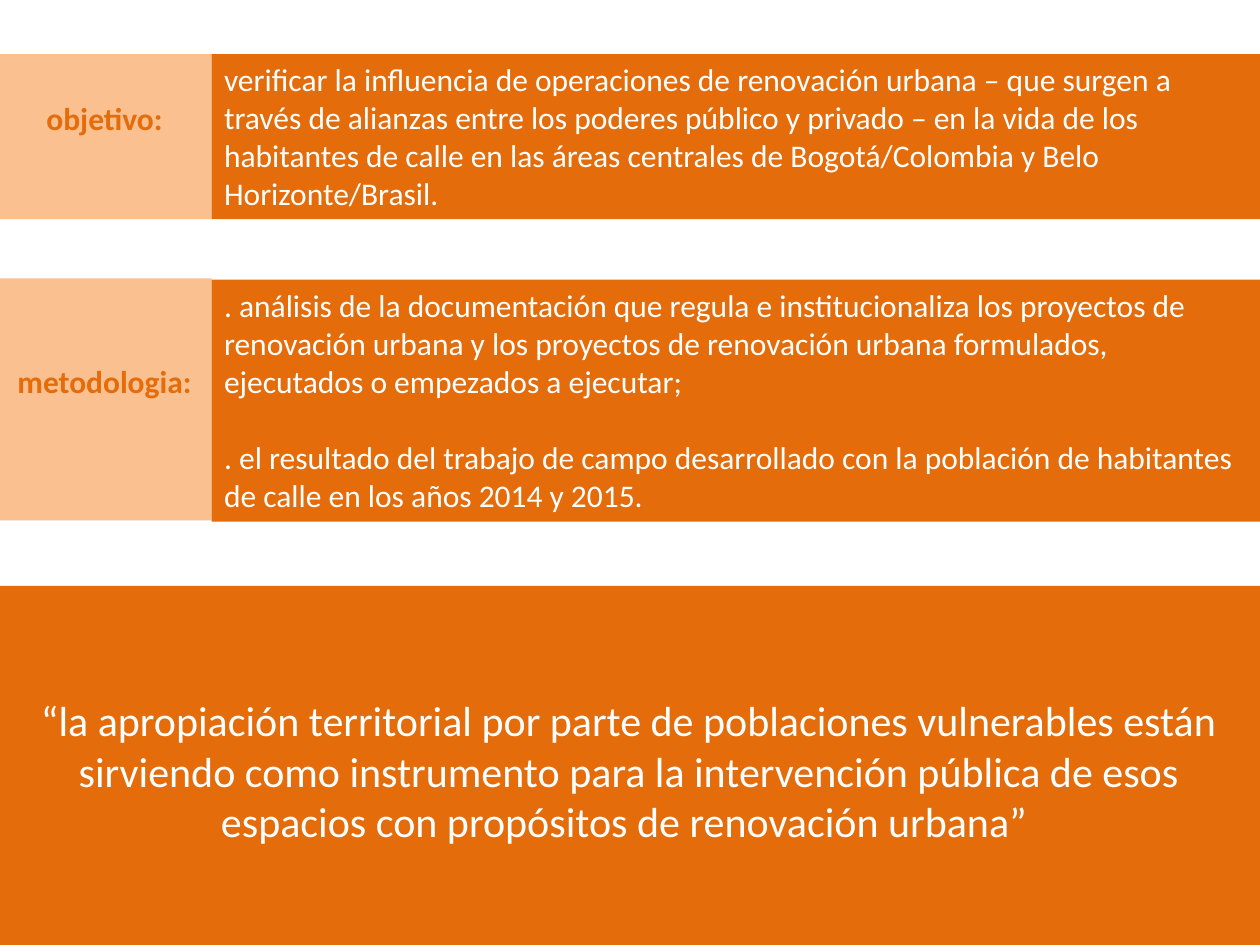
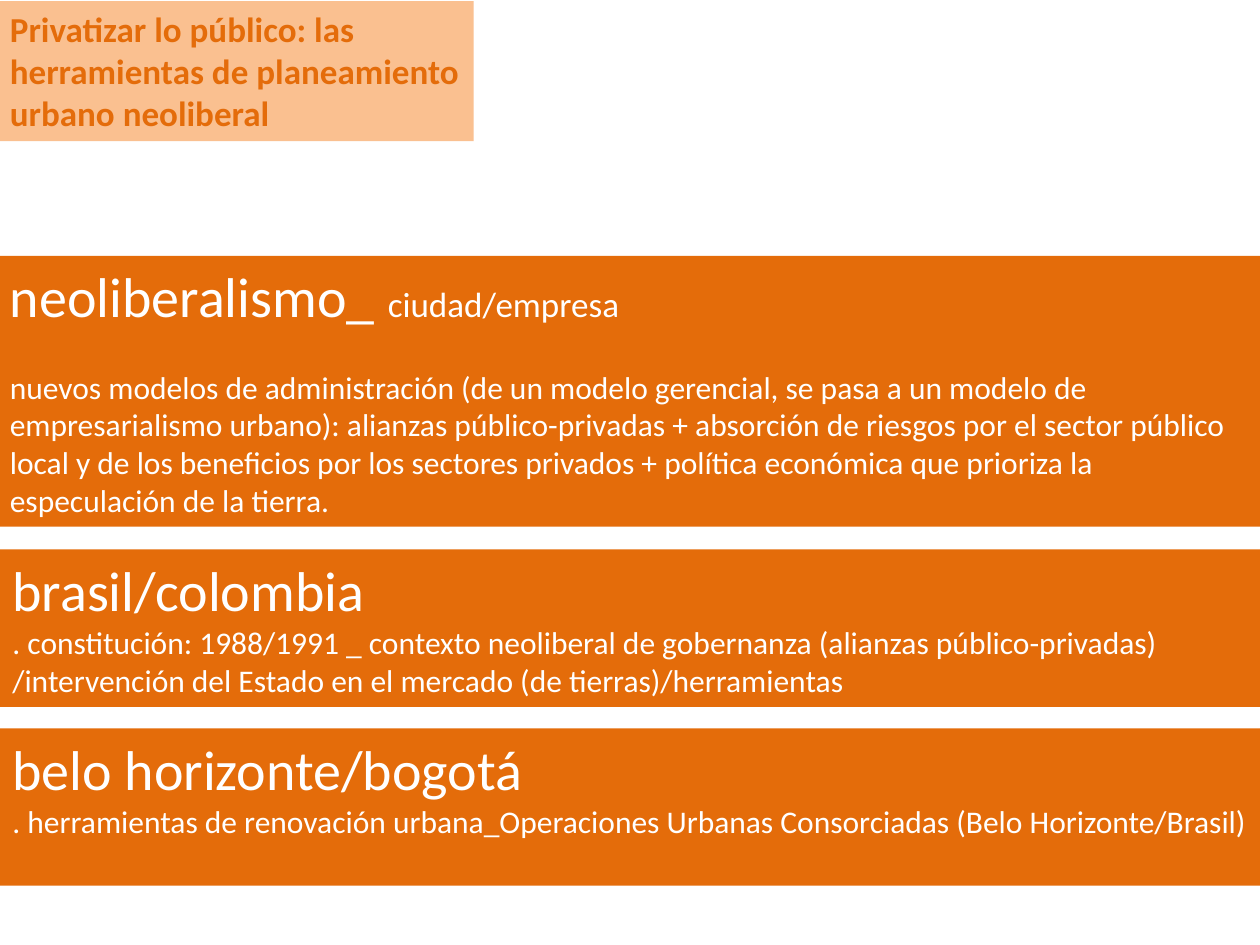
from pptx import Presentation
from pptx.dml.color import RGBColor
from pptx.enum import shapes, text
from pptx.util import Inches, Pt

ORANGE = RGBColor(0xE4, 0x6C, 0x0A)
PEACH = RGBColor(0xFA, 0xC0, 0x90)
WHITE = RGBColor(0xFF, 0xFF, 0xFF)
FONT = "Calibri"
LINE_HEIGHT = 1.22
PADDING = 0.05
EDGE = -0.02
FULL_WIDTH = 10.02
LABEL_WIDTH = 1.7
BODY_LEFT = EDGE + LABEL_WIDTH
BODY_WIDTH = 8.32
HEADING, SUBHEADING, QUOTE, BODY = 32, 20, 24, 18

SECTIONS = [
    ("objetivo:", 1, 0.43, 0.43, 1.31, [
        "verificar la influencia de operaciones de renovación urbana – que surgen a "
        "través de alianzas entre los poderes público y privado – en la vida de los "
        "habitantes de calle en las áreas centrales de Bogotá/Colombia y Belo "
        "Horizonte/Brasil.",
    ]),
    ("metodologia:", 2, 2.21, 2.22, 1.92, [
        ". análisis de la documentación que regula e institucionaliza los proyectos de "
        "renovación urbana y los proyectos de renovación urbana formulados, "
        "ejecutados o empezados a ejecutar;",
        ". el resultado del trabajo de campo desarrollado con la población de "
        "habitantes de calle en los años 2014 y 2015.",
    ]),
]
HYPOTHESIS = (
    "“la apropiación territorial por parte de poblaciones vulnerables están "
    "sirviendo como instrumento para la intervención pública de esos "
    "espacios con propósitos de renovación urbana” "
)
TOPIC = "Privatizar lo público: las herramientas de planeamiento urbano neoliberal"
THEMES = [
    (EDGE, 2.03, 2.15, 1, [("neoliberalismo_ ", HEADING), ("ciudad/empresa", SUBHEADING)],
     "nuevos modelos de administración (de un modelo gerencial, se pasa a un modelo de "
     "empresarialismo urbano): alianzas público-privadas + absorción de riesgos por el "
     "sector público local y de los beneficios por los sectores privados + política "
     "económica que prioriza la especulación de la tierra."),
    (0, 4.36, 1.25, 0, [("brasil/colombia", HEADING)],
     ". constitución: 1988/1991 _ contexto neoliberal de gobernanza (alianzas "
     "público-privadas) /intervención del Estado en el mercado (de "
     "tierras)/herramientas"),
    (0, 5.78, 1.25, 0, [("belo horizonte/bogotá", HEADING)],
     ". herramientas de renovación urbana_Operaciones Urbanas Consorciadas "
     "(Belo Horizonte/Brasil)"),
]


def add_band(slide, place, paragraphs, label=False, centred=False, lines_above=0, gap_lines=0):
    band = slide.shapes.add_shape(
        shapes.MSO_SHAPE.RECTANGLE, *(Inches(length) for length in place))
    band.shadow.inherit = False
    band.fill.solid()
    band.fill.fore_color.rgb = PEACH if label else ORANGE
    band.line.fill.background()
    frame = band.text_frame
    frame.word_wrap = True
    frame.vertical_anchor = text.MSO_ANCHOR.TOP
    first_size = paragraphs[0][0][1]
    frame.margin_top = Inches(PADDING) + Pt(lines_above * first_size * LINE_HEIGHT)
    for index, runs in enumerate(paragraphs):
        paragraph = frame.paragraphs[0] if index == 0 else frame.add_paragraph()
        paragraph.alignment = text.PP_ALIGN.CENTER if centred else text.PP_ALIGN.LEFT
        if index:
            paragraph.space_before = Pt(gap_lines * BODY * LINE_HEIGHT)
        for words, size in runs:
            run = paragraph.add_run()
            run.text = words
            run.font.name = FONT
            run.font.size = Pt(size)
            run.font.bold = label
            run.font.color.rgb = ORANGE if label else WHITE


def build_aims(slide):
    for name, lines_above, label_top, body_top, height, points in SECTIONS:
        add_band(slide, (EDGE, label_top, LABEL_WIDTH, height), [[(name, BODY)]],
                 label=True, centred=True, lines_above=lines_above)
        add_band(slide, (BODY_LEFT, body_top, BODY_WIDTH, height),
                 [[(point, BODY)] for point in points], gap_lines=1)
    add_band(slide, (EDGE, 4.65, FULL_WIDTH, 2.93), [[(HYPOTHESIS, QUOTE)]],
             centred=True, lines_above=2)


def build_themes(slide):
    add_band(slide, (EDGE, 0.01, 3.78, 1.11), [[(TOPIC, SUBHEADING)]], label=True)
    for left, top, height, gap_lines, heading, detail in THEMES:
        add_band(slide, (left, top, FULL_WIDTH, height),
                 [heading, [(detail, BODY)]], gap_lines=gap_lines)


def main():
    deck = Presentation()
    deck.slide_width, deck.slide_height = Inches(10), Inches(7.5)
    blank = deck.slide_layouts[6]
    for build in (build_aims, build_themes):
        build(deck.slides.add_slide(blank))
    deck.save("out.pptx")


if __name__ == "__main__":
    main()
